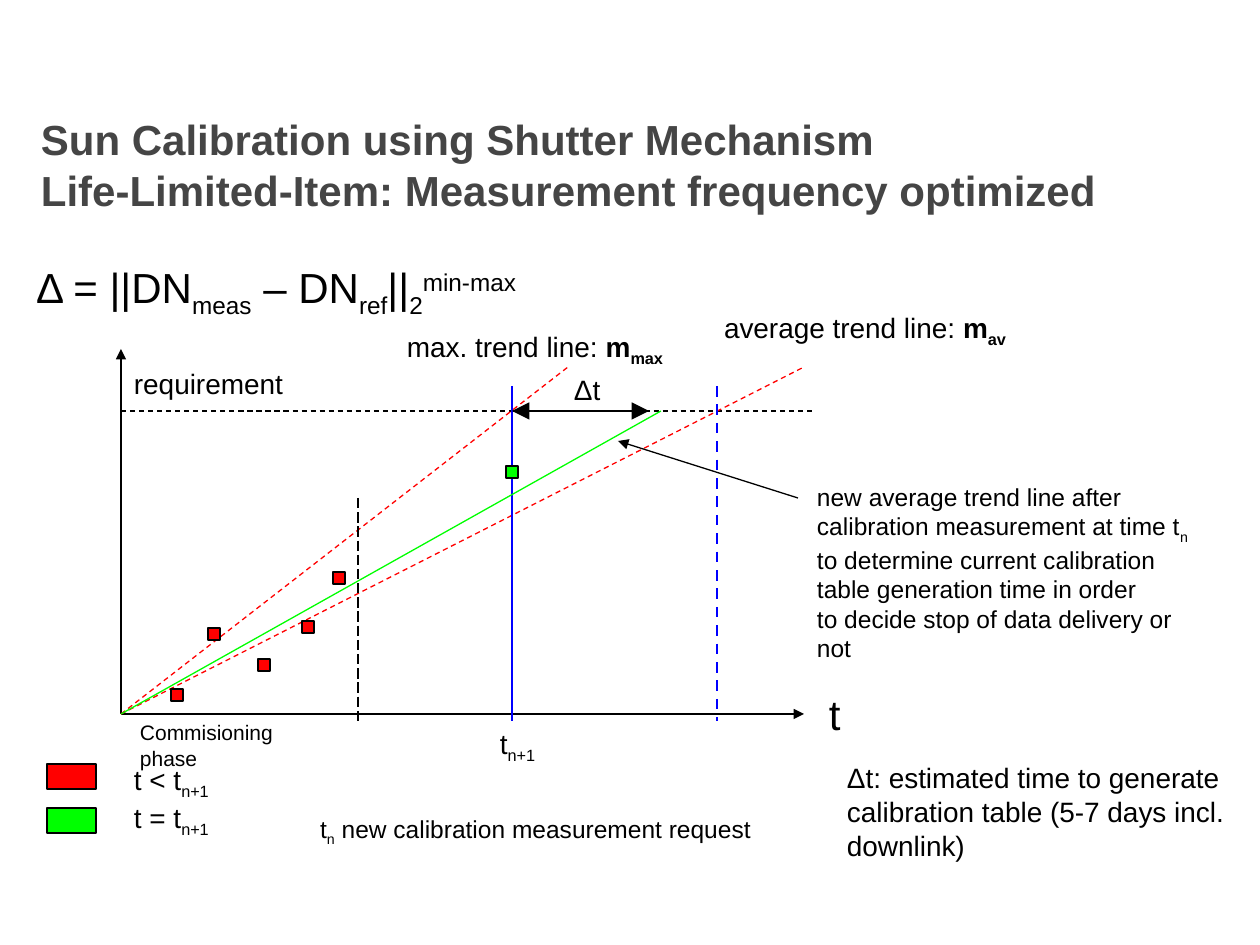
from typing import NamedTuple, Optional

from lxml.etree import SubElement
from pptx import Presentation
from pptx.dml.color import RGBColor
from pptx.enum.dml import MSO_LINE_DASH_STYLE as Dash
from pptx.enum.shapes import MSO_CONNECTOR, MSO_SHAPE
from pptx.enum.text import MSO_ANCHOR, MSO_AUTO_SIZE
from pptx.oxml.ns import qn
from pptx.util import Emu, Pt

EMU_PER_PX = 914400 / 126
BLACK = RGBColor(0x00, 0x00, 0x00)
GREY = RGBColor(0x45, 0x45, 0x45)
RED = RGBColor(0xFF, 0x00, 0x00)
GREEN = RGBColor(0x00, 0xFF, 0x00)
BLUE = RGBColor(0x00, 0x00, 0xFF)
SUB, SUPER = -25000, 30000
INSET = 13

# Plot geometry
ORIGIN = (121, 714)
AXIS_TOP, AXIS_RIGHT = 349, 804
REQUIREMENT_Y, TREND_TOP = 411, 367
PHASE_X, REQUEST_X, AVERAGE_X = 358, 512, 717
TICK_BOTTOM = 721
MARKER_SIZE = 12


class Run(NamedTuple):
    text: str
    baseline: int = 0
    bold: bool = False


class Line(NamedTuple):
    start: tuple[int, int]
    end: tuple[int, int]
    color: RGBColor = BLACK
    width: float = 0.75
    dash: Optional[Dash] = None
    arrows: tuple[str, ...] = ()
    arrow_size: str = "med"


class Box(NamedTuple):
    left: int
    top: int
    width: int
    height: int


class Label(NamedTuple):
    box: Box
    paragraphs: list[list[Run]]
    size: int = 16
    wrap: bool = False
    right_inset: int = INSET


def px(value: float) -> Emu:
    return Emu(round(value * EMU_PER_PX))


def draw_line(slide, line: Line) -> None:
    points = [px(value) for value in (*line.start, *line.end)]
    connector = slide.shapes.add_connector(MSO_CONNECTOR.STRAIGHT, *points)
    connector.line.color.rgb = line.color
    connector.line.width = Pt(line.width)
    if line.dash is not None:
        connector.line.dash_style = line.dash
    outline = connector.line._get_or_add_ln()
    for arrow in line.arrows:
        SubElement(outline, qn(f"a:{arrow}"), type="triangle",
                   w=line.arrow_size, len=line.arrow_size)
    SubElement(connector._element.spPr, qn("a:effectLst"))


def draw_rectangle(slide, box: Box, color: RGBColor) -> None:
    shape = slide.shapes.add_shape(MSO_SHAPE.RECTANGLE, *map(px, box))
    shape.shadow.inherit = False
    shape.fill.solid()
    shape.fill.fore_color.rgb = color
    shape.line.color.rgb = BLACK
    shape.line.width = Pt(0.75)


def draw_marker(slide, center: tuple[int, int], color: RGBColor) -> None:
    left, top = (value - MARKER_SIZE // 2 for value in center)
    draw_rectangle(slide, Box(left, top, MARKER_SIZE, MARKER_SIZE), color)


def add_text(slide, box: Box, paragraphs: list[list[Run]], *, size: int = 16,
             color: RGBColor = BLACK, wrap: bool = False, inset: int = INSET,
             right_inset: int = INSET, inset_y: int = 6,
             spacing: Optional[int] = None) -> None:
    frame = slide.shapes.add_textbox(*map(px, box)).text_frame
    frame.word_wrap = wrap
    frame.auto_size = MSO_AUTO_SIZE.NONE if wrap else MSO_AUTO_SIZE.SHAPE_TO_FIT_TEXT
    frame.vertical_anchor = MSO_ANCHOR.TOP
    frame.margin_left, frame.margin_right = px(inset), px(right_inset)
    frame.margin_top = frame.margin_bottom = px(inset_y)
    for index, runs in enumerate(paragraphs):
        paragraph = frame.add_paragraph() if index else frame.paragraphs[0]
        if spacing:
            paragraph.line_spacing = Pt(spacing)
        for part in runs:
            for number, text in enumerate(part.text.split("\n")):
                if number:
                    paragraph.add_line_break()
                run = paragraph.add_run()
                run.text = text
                font = run.font
                font.name, font.size, font.bold = "Arial", Pt(size), part.bold
                font.color.rgb = color
                if part.baseline:
                    font._element.set("baseline", str(part.baseline))


LINES = [
    # Axes and requirement level
    Line(ORIGIN, (ORIGIN[0], AXIS_TOP), arrows=("tailEnd",)),
    Line(ORIGIN, (AXIS_RIGHT, ORIGIN[1]), arrows=("tailEnd",)),
    Line((ORIGIN[0], REQUIREMENT_Y), (816, REQUIREMENT_Y), dash=Dash.DASH),
    # Average and maximum trend lines
    Line(ORIGIN, (AXIS_RIGHT, TREND_TOP), RED, dash=Dash.DASH),
    Line(ORIGIN, (568, TREND_TOP), RED, dash=Dash.DASH),
    # Time limits
    Line((PHASE_X, 498), (PHASE_X, TICK_BOTTOM), dash=Dash.LONG_DASH),
    Line((REQUEST_X, 386), (REQUEST_X, TICK_BOTTOM), BLUE, 1.5),
    Line((AVERAGE_X, 386), (AVERAGE_X, TICK_BOTTOM), BLUE, 1.5, Dash.DASH),
    Line((REQUEST_X, REQUIREMENT_Y), (649, REQUIREMENT_Y), width=1.5,
         arrows=("headEnd", "tailEnd"), arrow_size="lg"),
    # New average trend line and its pointer
    Line(ORIGIN, (661, REQUIREMENT_Y), GREEN),
    Line((798, 498), (618, 441), arrows=("tailEnd",)),
]

EARLIER_POINTS = [(177, 695), (214, 634), (264, 665), (308, 627), (339, 578)]
NEW_POINT = (REQUEST_X, 472)

LABELS = [
    Label(Box(816, 683, 37, 63), [[Run("t")]], 24),
    Label(Box(711, 305, 311, 47),
          [[Run("average trend line: "), Run("m", bold=True), Run("av", SUB, True)]]),
    Label(Box(394, 324, 289, 47),
          [[Run("max. trend line: "), Run("m", bold=True), Run("max", SUB, True)]]),
    Label(Box(121, 361, 175, 47), [[Run("requirement")]]),
    Label(Box(561, 367, 56, 47), [[Run("Δt")]], wrap=True, right_inset=0),
    Label(Box(307, 808, 471, 42),
          [[Run("t"), Run("n", SUB), Run(" new calibration measurement request")]],
          14, wrap=True),
    Label(Box(487, 721, 66, 47), [[Run("t"), Run("n+1", SUB)]]),
    Label(Box(834, 755, 415, 115),
          [[Run("Δt: estimated time to generate")],
           [Run("calibration table (5-7 days incl.\ndownlink)")]]),
    Label(Box(804, 476, 418, 159),
          [[Run("new average trend line after")],
           [Run("calibration measurement at time t"), Run("n", SUB)],
           [Run("to determine current calibration")],
           [Run("table generation time in order")],
           [Run("to decide stop of data delivery or not")]],
          14, wrap=True, right_inset=24),
    Label(Box(23, 256, 587, 63),
          [[Run("Δ = ||DN"), Run("meas", SUB), Run(" – DN"), Run("ref", SUB),
            Run("||"), Run("2", SUB), Run("min-max", SUPER)]], 24, wrap=True),
    Label(Box(127, 714, 220, 38), [[Run("Commisioning phase")]], 12,
          wrap=True, right_inset=55),
]

# Legend: key colour, key top, label top, relation
LEGEND = [(RED, 764, 757, "<"), (GREEN, 808, 795, "=")]


def main() -> None:
    presentation = Presentation()
    presentation.slide_width, presentation.slide_height = px(1260), px(945)
    slide = presentation.slides.add_slide(presentation.slide_layouts[6])

    # Title
    title = "Sun Calibration using Shutter Mechanism\nLife-Limited-Item: Measurement frequency optimized"
    add_text(slide, Box(41, 113, 1182, 116), [[Run(title, bold=True)]], size=24,
             color=GREY, wrap=True, inset=0, right_inset=0, inset_y=0, spacing=29)

    # Plot
    for line in LINES:
        draw_line(slide, line)
    for point in EARLIER_POINTS:
        draw_marker(slide, point, RED)
    draw_marker(slide, NEW_POINT, GREEN)

    # Labels
    for label in LABELS:
        add_text(slide, label.box, label.paragraphs, size=label.size,
                 wrap=label.wrap, right_inset=label.right_inset)

    # Legend
    for color, key_top, label_top, relation in LEGEND:
        draw_rectangle(slide, Box(47, key_top, 49, 25), color)
        add_text(slide, Box(121, label_top, 113, 47),
                 [[Run(f"t {relation} t"), Run("n+1", SUB)]])

    presentation.save("out.pptx")


if __name__ == "__main__":
    main()
